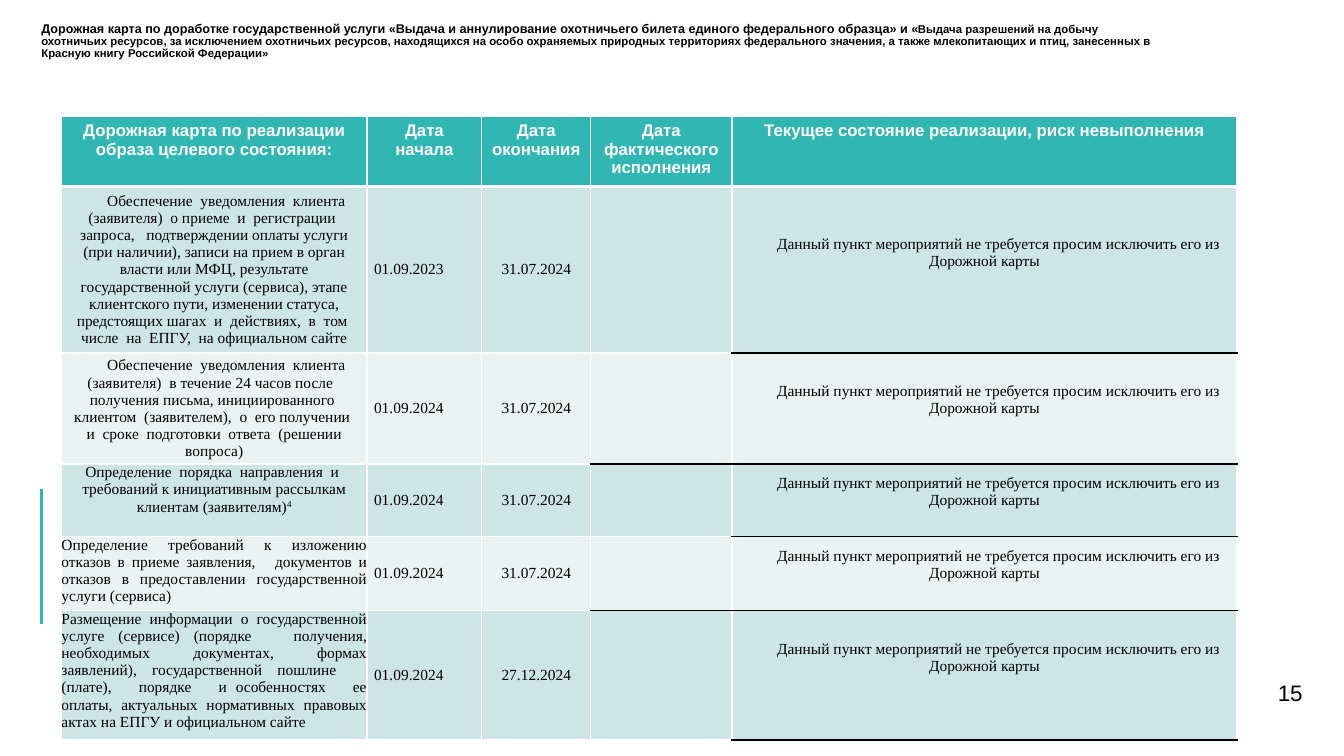
from dataclasses import dataclass

from lxml import etree
from pptx import Presentation
from pptx.dml.color import RGBColor
from pptx.enum.shapes import MSO_CONNECTOR
from pptx.enum.text import MSO_ANCHOR, PP_ALIGN
from pptx.oxml.ns import qn
from pptx.util import Inches, Pt

LEFT, CENTER, RIGHT, JUSTIFY = PP_ALIGN.LEFT, PP_ALIGN.CENTER, PP_ALIGN.RIGHT, PP_ALIGN.JUSTIFY
TOP, MIDDLE = MSO_ANCHOR.TOP, MSO_ANCHOR.MIDDLE
STRAIGHT = MSO_CONNECTOR.STRAIGHT


@dataclass(frozen=True)
class Theme:
    accent: str = "30B6B3"
    band_dark: str = "CDE5E5"
    band_light: str = "E8F3F2"
    white: str = "FFFFFF"
    black: str = "000000"
    sans: str = "Arial"
    serif: str = "Times New Roman"
    title: float = 9
    subtitle: float = 8.1
    header: float = 12
    body: float = 11
    page: float = 16


THEME = Theme()

TITLE = ("Дорожная карта по доработке государственной услуги «Выдача и аннулирование "
         "охотничьего билета единого федерального образца» и «")
SUBTITLE = ("Выдача разрешений на добычу охотничьих ресурсов, за исключением охотничьих ресурсов, "
            "находящихся на особо охраняемых природных территориях федерального значения, "
            "а также млекопитающих и птиц, занесенных в Красную книгу Российской Федерации»")
HEADERS = ["Дорожная карта по реализации образа целевого состояния:", "Дата начала",
           "Дата окончания", "Дата фактического исполнения",
           "Текущее состояние реализации, риск невыполнения"]
STATUS = "Данный пункт мероприятий не требуется просим исключить его из Дорожной карты"

COLUMN_WIDTHS = [3.03, 1.14, 1.08, 1.4, 5.01]
ROW_HEIGHTS = [0.65, 1.53, 1.02, 0.72, 0.67, 1.19]
SIDE_MARGINS = (0.07, 0, 0.07, 0)
NO_MARGINS = (0, 0, 0, 0)
INDENTED = dict(align=CENTER, anchor=MIDDLE, indent=0.28, margins=SIDE_MARGINS)
FLUSH = dict(align=JUSTIFY, margins=NO_MARGINS)

# Task, its format, start, end, space kept under the status text
TASKS = [
    ("Обеспечение  уведомления  клиента  (заявителя)  о приеме  и  регистрации  запроса,   "
     "подтверждении оплаты услуги (при наличии), записи на прием в орган власти или МФЦ, "
     "результате государственной услуги (сервиса), этапе клиентского пути, изменении статуса, "
     "предстоящих шагах  и  действиях,  в  том  числе  на  ЕПГУ,  на официальном сайте",
     INDENTED, "01.09.2023", "31.07.2024", 0.34),
    ("Обеспечение  уведомления  клиента  (заявителя)  в течение 24 часов после   получения "
     "письма, инициированного  клиентом  (заявителем),  о  его получении  и  сроке  "
     "подготовки  ответа  (решении вопроса)",
     INDENTED, "01.09.2024", "31.07.2024", 0.17),
    ([("Определение  порядка  направления  и  требований к инициативным рассылкам клиентам "
       "(заявителям)", {}), ("4", {"superscript": True})],
     dict(align=CENTER, margins=NO_MARGINS), "01.09.2024", "31.07.2024", 0.17),
    ("Определение требований к изложению отказов в приеме заявления, \tдокументов и отказов "
     "в предоставлении государственной услуги (сервиса)",
     FLUSH, "01.09.2024", "31.07.2024", 0.17),
    ("Размещение информации о государственной услуге (сервисе) (порядке \tполучения, "
     "необходимых документах, формах заявлений), государственной пошлине   (плате),   "
     "порядке   и особенностях   ее оплаты, актуальных нормативных правовых актах на ЕПГУ "
     "и официальном сайте",
     FLUSH, "01.09.2024", "27.12.2024", 0.34),
]


def write(text_frame, text, size, font=THEME.sans, color=THEME.black, bold=False,
          align=LEFT, indent=0, line_spacing=None):
    """Write one paragraph; text is a string or a list of (string, format) runs."""
    paragraph = text_frame.paragraphs[0]
    paragraph.alignment = align
    if line_spacing:
        paragraph.line_spacing = line_spacing
    if indent:
        properties = paragraph._p.get_or_add_pPr()
        properties.set("marL", "0")
        properties.set("indent", str(Inches(indent)))
    for content, style in [(text, {})] if isinstance(text, str) else text:
        run = paragraph.add_run()
        run.text = content
        run.font.name = font
        run.font.size = Pt(style.get("size", size))
        run.font.bold = bold
        run.font.color.rgb = RGBColor.from_string(color)
        if style.get("superscript"):
            run._r.get_or_add_rPr().set("baseline", "30000")


def set_margins(target, margins):
    sides = ("margin_left", "margin_top", "margin_right", "margin_bottom")
    for side, margin in zip(sides, margins):
        setattr(target, side, Inches(margin))


def add_text(slide, left, top, width, height, text, anchor=TOP, **text_format):
    text_frame = slide.shapes.add_textbox(
        Inches(left), Inches(top), Inches(width), Inches(height)).text_frame
    text_frame.word_wrap = True
    text_frame.vertical_anchor = anchor
    set_margins(text_frame, NO_MARGINS)
    write(text_frame, text, **text_format)


def add_line(slide, x1, y1, x2, y2, color, width):
    line = slide.shapes.add_connector(STRAIGHT, Inches(x1), Inches(y1), Inches(x2), Inches(y2))
    line.line.color.rgb = RGBColor.from_string(color)
    line.line.width = Pt(width)
    etree.SubElement(line._element.spPr, qn("a:effectLst"))


def bottom_edge(row, column):
    """Colour and width of the line under a cell."""
    if row == 0:
        return THEME.white, 3
    black = row > 0 and (column == 4 or (column == 3 and row in (2, 4)))
    return (THEME.black if black else THEME.white), 1


def set_borders(cell, row, column):
    side = (THEME.white, 1)
    edges = {"a:lnL": side, "a:lnR": side,
             "a:lnT": bottom_edge(row - 1, column), "a:lnB": bottom_edge(row, column)}
    properties = cell._tc.get_or_add_tcPr()
    for index, (tag, (color, width)) in enumerate(edges.items()):
        border = etree.Element(qn(tag), w=str(Pt(width)))
        fill = etree.SubElement(border, qn("a:solidFill"))
        etree.SubElement(fill, qn("a:srgbClr"), val=color)
        properties.insert(index, border)


def fill_cell(cell, text, margins=None, anchor=TOP, **text_format):
    if margins:
        set_margins(cell, margins)
    cell.vertical_anchor = anchor
    write(cell.text_frame, text, **text_format)


def add_roadmap(slide, left, top):
    table = slide.shapes.add_table(
        len(ROW_HEIGHTS), len(COLUMN_WIDTHS), Inches(left), Inches(top),
        Inches(sum(COLUMN_WIDTHS)), Inches(sum(ROW_HEIGHTS))).table
    table.horz_banding = False
    for column, width in zip(table.columns, COLUMN_WIDTHS):
        column.width = Inches(width)

    # Fills and borders
    for row_index, height in enumerate(ROW_HEIGHTS):
        table.rows[row_index].height = Inches(height)
        band = THEME.band_dark if row_index % 2 else THEME.band_light
        for column_index in range(len(COLUMN_WIDTHS)):
            cell = table.cell(row_index, column_index)
            cell.fill.solid()
            cell.fill.fore_color.rgb = RGBColor.from_string(band if row_index else THEME.accent)
            set_borders(cell, row_index, column_index)

    # Header
    for column_index, header in enumerate(HEADERS):
        fill_cell(table.cell(0, column_index), header, size=THEME.header,
                  color=THEME.white, bold=True, align=CENTER)

    # Tasks
    body = dict(size=THEME.body, font=THEME.serif)
    date = dict(anchor=MIDDLE, margins=SIDE_MARGINS, **body)
    for row_index, (task, task_format, start, end, space_below) in enumerate(TASKS, start=1):
        fill_cell(table.cell(row_index, 0), task, **body, **task_format)
        fill_cell(table.cell(row_index, 1), start, **date)
        fill_cell(table.cell(row_index, 2), end, align=CENTER, **date)
        status_format = {**INDENTED, "margins": (0.07, 0, 0.07, space_below)}
        fill_cell(table.cell(row_index, 4), STATUS, **body, **status_format)


def main():
    presentation = Presentation()
    presentation.slide_width = Inches(13.33)
    presentation.slide_height = Inches(7.5)
    slide = presentation.slides.add_slide(presentation.slide_layouts[6])

    # Title and page number
    add_text(slide, 0.41, 0.22, 11.05, 0.39, [(TITLE, {}), (SUBTITLE, {"size": THEME.subtitle})],
             size=THEME.title, bold=True, line_spacing=0.9)
    add_text(slide, 11.86, 6.66, 1.06, 0.43, "15", size=THEME.page, align=RIGHT, anchor=MIDDLE)

    # Accent line and roadmap
    add_line(slide, 0.41, 4.85, 0.41, 6.19, THEME.accent, 2.25)
    add_roadmap(slide, 0.61, 1.15)

    presentation.save("out.pptx")


if __name__ == "__main__":
    main()
